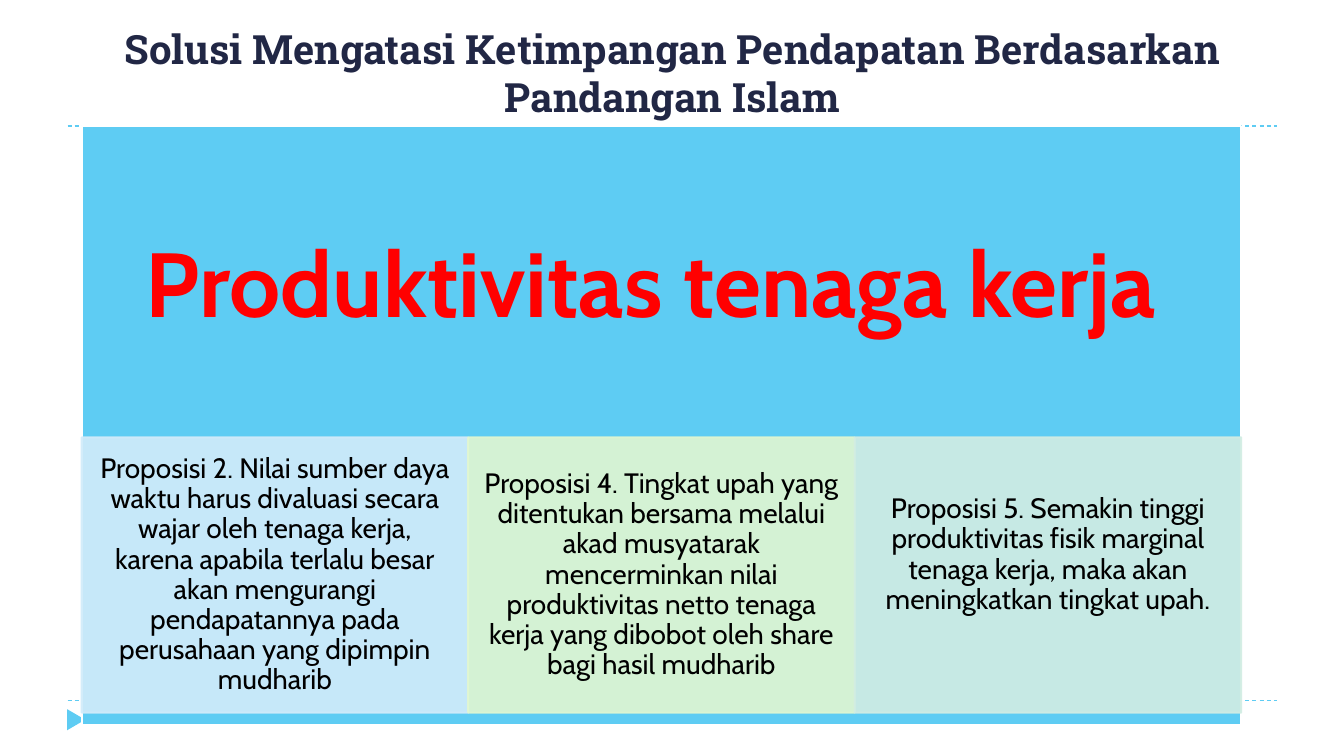
import pptx
import pptx.util
import pptx.dml.color
import pptx.enum.dml
import pptx.enum.shapes
import pptx.enum.text
import pptx.oxml.ns
import lxml.etree

Inches = pptx.util.Inches
Pt = pptx.util.Pt
RGBColor = pptx.dml.color.RGBColor
SHAPE = pptx.enum.shapes.MSO_SHAPE
ANCHOR = pptx.enum.text.MSO_ANCHOR
qn = pptx.oxml.ns.qn

SKY = RGBColor(0x5E, 0xCC, 0xF3)
NAVY = RGBColor(0x21, 0x27, 0x45)
RED = RGBColor(0xFF, 0x00, 0x00)
BLACK = RGBColor(0x00, 0x00, 0x00)
WHITE = RGBColor(0xFF, 0xFF, 0xFF)
PALE_BLUE = RGBColor(0xD2, 0xEC, 0xFA)
PALE_GREEN = RGBColor(0xE1, 0xF7, 0xD1)
PALE_TEAL = RGBColor(0xD2, 0xED, 0xE3)

TITLE = "Solusi Mengatasi Ketimpangan Pendapatan Berdasarkan Pandangan Islam"
HEADING = "Produktivitas tenaga kerja "
# Text, colour and bottom inset of each card
CARDS = [
    ("Proposisi 2. Nilai sumber daya waktu harus divaluasi secara wajar oleh "
     "tenaga kerja, karena apabila terlalu besar akan mengurangi pendapatannya "
     "pada perusahaan yang dipimpin mudharib", PALE_BLUE, 0.03),
    ("Proposisi 4. Tingkat upah yang ditentukan bersama melalui akad musyatarak "
     "mencerminkan nilai produktivitas netto tenaga kerja yang dibobot oleh "
     "share bagi hasil mudharib", PALE_GREEN, 0.03),
    ("Proposisi 5. Semakin tinggi produktivitas fisik marginal tenaga kerja, "
     "maka akan meningkatkan tingkat upah.", PALE_TEAL, 0.43),
]


def write(s, text, font, size, color, bold=False, anchor=ANCHOR.MIDDLE,
          insets=(0.1, 0.05, 0.1, 0.05), spacing=1.0):
    """Put one centred paragraph in a shape; insets are left, top, right, bottom."""
    tf = s.text_frame
    tf.word_wrap = True
    tf.vertical_anchor = anchor
    tf.margin_left, tf.margin_top, tf.margin_right, tf.margin_bottom = map(Inches, insets)
    tf.text = text
    p = tf.paragraphs[0]
    p.alignment = pptx.enum.text.PP_ALIGN.CENTER
    p.line_spacing = spacing
    f = p.runs[0].font
    f.name, f.size, f.bold = font, Pt(size), bold
    f.color.rgb = color


def add_filled(slide, kind, box, fill, line=None):
    s = slide.shapes.add_shape(kind, *map(Inches, box))
    s.shadow.inherit = False
    s.fill.solid()
    s.fill.fore_color.rgb = fill
    if line is None:
        s.line.fill.background()
    else:
        s.line.color.rgb = line
        s.line.width = Pt(1.5)
    return s


def set_opacity(s, percent):
    """Apply the opacity to both fill and outline."""
    for color in s._element.spPr.iter(qn("a:srgbClr")):
        lxml.etree.SubElement(color, qn("a:alpha")).set("val", str(percent * 1000))


def add_frame(slide, box):
    """Dashed rules above and below the box, with a marker at the lower left."""
    left, top, width, height = box
    for y in (top + height, top):
        rule = slide.shapes.add_connector(
            pptx.enum.shapes.MSO_CONNECTOR.STRAIGHT,
            Inches(left), Inches(y), Inches(left + width), Inches(y))
        rule.line.color.rgb = SKY
        rule.line.width = Pt(0.75)
        rule.line.dash_style = pptx.enum.dml.MSO_LINE.DASH
        lxml.etree.SubElement(rule._element.spPr, qn("a:effectLst"))
    marker = add_filled(slide, SHAPE.ISOSCELES_TRIANGLE,
                        (left - 0.02, top + height + 0.1, 0.21, 0.18), SKY)
    marker.rotation = 90


def add_title(slide, box):
    s = slide.shapes.add_textbox(*map(Inches, box))
    write(s, TITLE, "Roboto Slab", 28.8, NAVY, bold=True, anchor=ANCHOR.BOTTOM)


def add_panel(slide, box):
    """Heading panel with a row of equal cards across its lower part."""
    left, top, width, height = box
    panel = add_filled(slide, SHAPE.RECTANGLE, box, SKY, WHITE)
    write(panel, HEADING, "Cabin", 65, RED, bold=True,
          insets=(0.51, 0.51, 0.51, 3.24), spacing=0.9)
    card_width = width / len(CARDS)
    for i, (text, color, bottom) in enumerate(CARDS):
        card = add_filled(slide, SHAPE.RECTANGLE,
                          (left + i * card_width, top + 3.09, card_width, 2.73),
                          color, color)
        set_opacity(card, 90)
        write(card, text, "Cabin", 20, BLACK,
              insets=(0.16, 0.03, 0.16, bottom), spacing=0.9)


def main():
    prs = pptx.Presentation()
    prs.slide_width, prs.slide_height = Inches(13.33), Inches(7.5)
    slide = prs.slides.add_slide(prs.slide_layouts[6])
    add_frame(slide, (0.67, 1.25, 12, 5.7))
    add_title(slide, (0.67, 0.17, 12, 1.08))
    add_panel(slide, (0.81, 1.25, 11.5, 5.94))
    prs.save("out.pptx")


if __name__ == "__main__":
    main()
